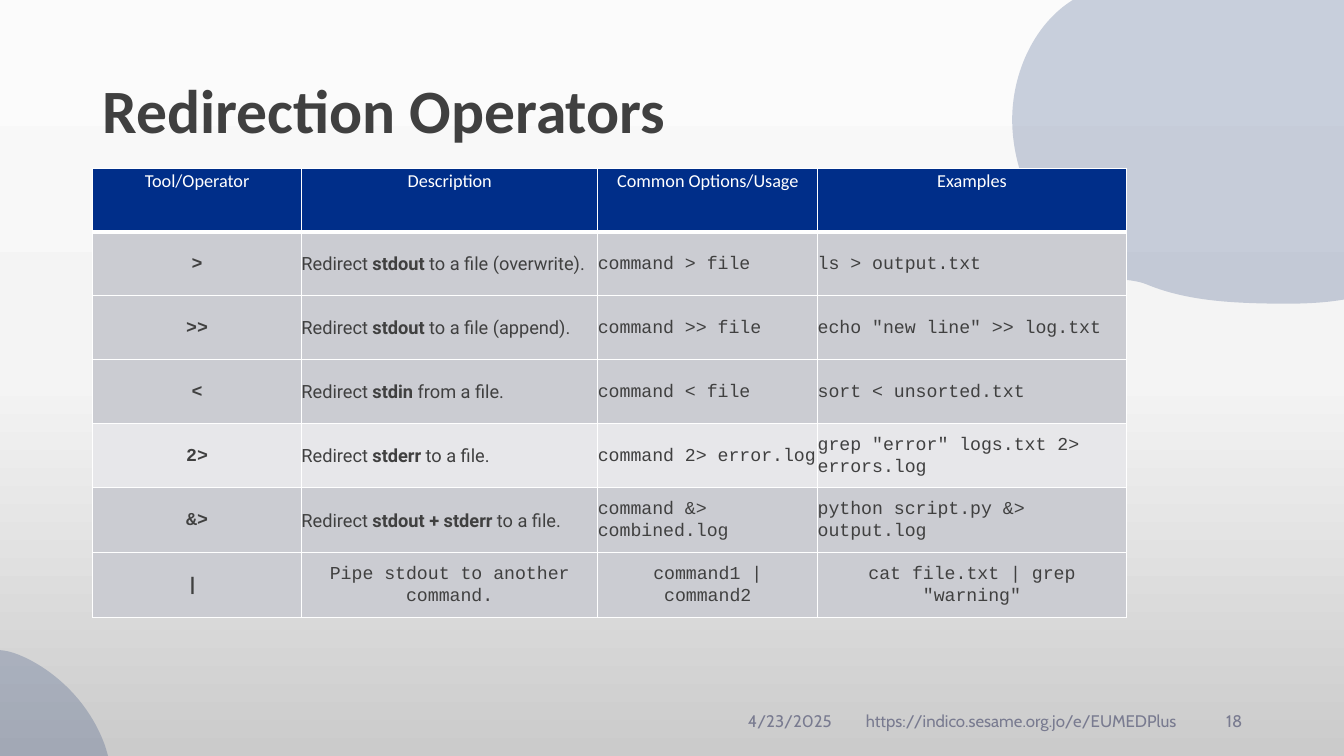
from lxml import etree
from pptx import Presentation
from pptx import util as u
from pptx.dml.color import RGBColor
from pptx.enum import text
from pptx.oxml.ns import qn

WIDTH, HEIGHT = 13.33, 7.5
TITLE = "Redirection Operators"
HEADER = ["Tool/Operator", "Description", "Common Options/Usage", "Examples"]
# *stars* mark bold words
ROWS = [
    (">", "Redirect *stdout* to a file (overwrite).", "command > file", "ls > output.txt"),
    (">>", "Redirect *stdout* to a file (append).", "command >> file",
     'echo "new line" >> log.txt'),
    ("<", "Redirect *stdin* from a file.", "command < file", "sort < unsorted.txt"),
    ("2>", "Redirect *stderr* to a file.", "command 2> error.log",
     'grep "error" logs.txt 2> errors.log'),
    ("&>", "Redirect *stdout + stderr* to a file.", "command &> combined.log",
     "python script.py &> output.log"),
    ("|", "Pipe stdout to another command.", "command1 | command2",
     'cat file.txt | grep "warning"'),
]
LIGHT_ROW, PIPE_ROW = 4, 6
COL_WIDTHS = [2.07, 2.94, 2.18, 3.06]
ROW_HEIGHTS = [0.63, 0.63, 0.64, 0.63, 0.64, 0.64, 0.64]
TABLE_LEFT, TABLE_TOP = 0.92, 1.67

LEFT, CENTER, RIGHT = text.PP_ALIGN.LEFT, text.PP_ALIGN.CENTER, text.PP_ALIGN.RIGHT
FOOTER = [  # text, left, width, alignment
    ("4/23/2025", 7.32, 1.07, LEFT),
    ("https://indico.sesame.org.jo/e/EUMEDPlus", 8.43, 3.4, CENTER),
    ("18", 11.99, 0.43, RIGHT),
]
BACKGROUND = [(0, "FBFBFB"), (50, "F4F4F4"), (100, "CBCBCB")]
DARK, NAVY, GREY, PALE, WHITE = "404040", "002E89", "CBCCD2", "E7E7EA", "FFFFFF"

# Bezier outline: a start point, then three points per curve
BLOB = [
    (10.73, 2.73),
    (10.36, 2.31), (10.06, 1.8), (10.04, 1.24),
    (10.02, 0.68), (10.32, 0.08), (10.85, -0.1),
    (11.21, -0.23), (11.6, -0.16), (11.96, -0.29),
    (12.35, -0.43), (12.67, -0.79), (13.09, -0.76),
    (13.22, -0.75), (13.34, -0.7), (13.46, -0.64),
    (13.94, -0.39), (14.32, 0.05), (14.5, 0.56),
    (14.67, 1.08), (14.64, 1.66), (14.4, 2.15),
    (14.3, 2.37), (14.15, 2.57), (13.95, 2.72),
    (13.55, 3.02), (13.01, 3.02), (12.51, 3.01),
    (12.13, 3), (11.73, 2.97), (11.37, 2.82),
    (11.2, 2.75), (10.91, 2.78), (10.73, 2.73),
]
BLOB_BOX = (10.04, -0.76, 4.57, 3.78)
CORNER_BOXES = [BLOB_BOX, (-2.24, 6.45, 3.36, 2.69)]


def rgb(hex_color):
    return RGBColor.from_string(hex_color)


def style(r, size, name, color, bold=False):
    r.font.size, r.font.name, r.font.bold = u.Pt(size), name, bold
    r.font.color.rgb = rgb(color)


def paint_background(slide):
    fill = slide.background.fill
    fill.gradient()
    fill.gradient_angle = 270
    stops = next(slide.element.iter(qn("a:gsLst")))
    for stop in list(stops):
        stops.remove(stop)
    for share, color in BACKGROUND:
        stop = etree.SubElement(stops, qn("a:gs"), pos=str(share * 1000))
        etree.SubElement(stop, qn("a:srgbClr"), val=color)


def bend_outline(sp, points, width, height):
    """Turn the straight segments of a freeform into Bezier curves."""
    outline = next(sp._element.iter(qn("a:path")))
    outline.set("w", str(width))
    outline.set("h", str(height))
    for child in list(outline):
        outline.remove(child)
    segments = [("a:moveTo", points[:1])]
    segments += [("a:cubicBezTo", points[i:i + 3]) for i in range(1, len(points), 3)]
    for tag, ends in segments:
        segment = etree.SubElement(outline, qn(tag))
        for x, y in ends:
            etree.SubElement(segment, qn("a:pt"), x=str(x), y=str(y))
    etree.SubElement(outline, qn("a:close"))


def add_blob(slide, *box):
    left, top, width, height = map(u.Inches, box)
    x0, y0, w, h = BLOB_BOX
    points = [(round((x - x0) / w * width), round((y - y0) / h * height)) for x, y in BLOB]
    anchors = points[::3]
    builder = slide.shapes.build_freeform(*anchors[0], scale=1.0)
    builder.add_line_segments(anchors[1:], close=True)
    sp = builder.convert_to_shape()
    bend_outline(sp, points, width, height)
    sp.left, sp.top, sp.width, sp.height = left, top, width, height
    sp.shadow.inherit = False
    sp.line.fill.background()
    sp.fill.solid()
    sp.fill.fore_color.rgb = rgb("002060")
    color = sp._element.spPr.find(qn("a:solidFill"))[0]
    etree.SubElement(color, qn("a:alpha"), val="20000")


def add_borders(cell, row):
    tcPr = cell._tc.get_or_add_tcPr()
    for side in "LRTB":
        thick = (row, side) in ((0, "B"), (1, "T"))
        ln = etree.SubElement(tcPr, qn("a:ln" + side), w=str(u.Pt(3 if thick else 1)))
        fill = etree.SubElement(ln, qn("a:solidFill"))
        etree.SubElement(fill, qn("a:srgbClr"), val=WHITE)


def fill_cell(cell, row, col, content):
    add_borders(cell, row)
    cell.fill.solid()
    cell.fill.fore_color.rgb = rgb(NAVY if row == 0 else PALE if row == LIGHT_ROW else GREY)
    inset = u.Inches(0.09 if row == PIPE_ROW else 0)
    cell.margin_left = 0 if col == 0 else inset
    cell.margin_right = cell.margin_top = cell.margin_bottom = inset
    cell.vertical_anchor = text.MSO_ANCHOR.MIDDLE if row else text.MSO_ANCHOR.TOP

    p = cell.text_frame.paragraphs[0]
    p.alignment = CENTER if row in (0, PIPE_ROW) or col == 0 else LEFT
    p.line_spacing, p.space_after = 1.07, u.Pt(8)
    if row == 0:
        name = "Calibri"
    else:
        name = "Roboto" if col == 1 and row != PIPE_ROW else "Courier New"
    for i, part in enumerate(content.split("*")):
        r = p.add_run()
        r.text = part
        bold = i % 2 == 1 or (row > 0 and col == 0)
        style(r, 13, name, DARK if row else WHITE, bold)


def add_operator_table(slide):
    lines = [HEADER, *ROWS]
    frame = slide.shapes.add_table(
        len(lines), len(HEADER), u.Inches(TABLE_LEFT), u.Inches(TABLE_TOP),
        u.Inches(sum(COL_WIDTHS)), u.Inches(sum(ROW_HEIGHTS)))
    table = frame.table
    table.horz_banding = False
    for column, width in zip(table.columns, COL_WIDTHS):
        column.width = u.Inches(width)
    for row, line in enumerate(lines):
        table.rows[row].height = u.Inches(ROW_HEIGHTS[row])
        for col, content in enumerate(line):
            fill_cell(table.cell(row, col), row, col, content)


def add_title(slide):
    title = slide.shapes.title
    slide.shapes._spTree.append(title._element)  # in front of the blobs
    title.left, title.top = u.Inches(0.92), u.Inches(0.4)
    title.width, title.height = u.Inches(11.5), u.Inches(1.45)
    tf = title.text_frame
    tf.text = TITLE
    tf.vertical_anchor = text.MSO_ANCHOR.MIDDLE
    p = tf.paragraphs[0]
    p.alignment, p.line_spacing = LEFT, 0.9
    style(p.runs[0], 44, "Calibri", DARK, True)


def add_footer(slide):
    for content, left, width, alignment in FOOTER:
        box = slide.shapes.add_textbox(
            u.Inches(left), u.Inches(6.95), u.Inches(width), u.Inches(0.4))
        tf = box.text_frame
        tf.word_wrap = True
        tf.vertical_anchor = text.MSO_ANCHOR.MIDDLE
        tf.text = content
        p = tf.paragraphs[0]
        p.alignment = alignment
        style(p.runs[0], 12, "Cabin", "797B90")


def main():
    prs = Presentation()
    prs.slide_width, prs.slide_height = u.Inches(WIDTH), u.Inches(HEIGHT)
    slide = prs.slides.add_slide(prs.slide_layouts[5])
    paint_background(slide)
    for box in CORNER_BOXES:
        add_blob(slide, *box)
    add_title(slide)
    add_footer(slide)
    add_operator_table(slide)
    prs.save("out.pptx")


if __name__ == "__main__":
    main()
